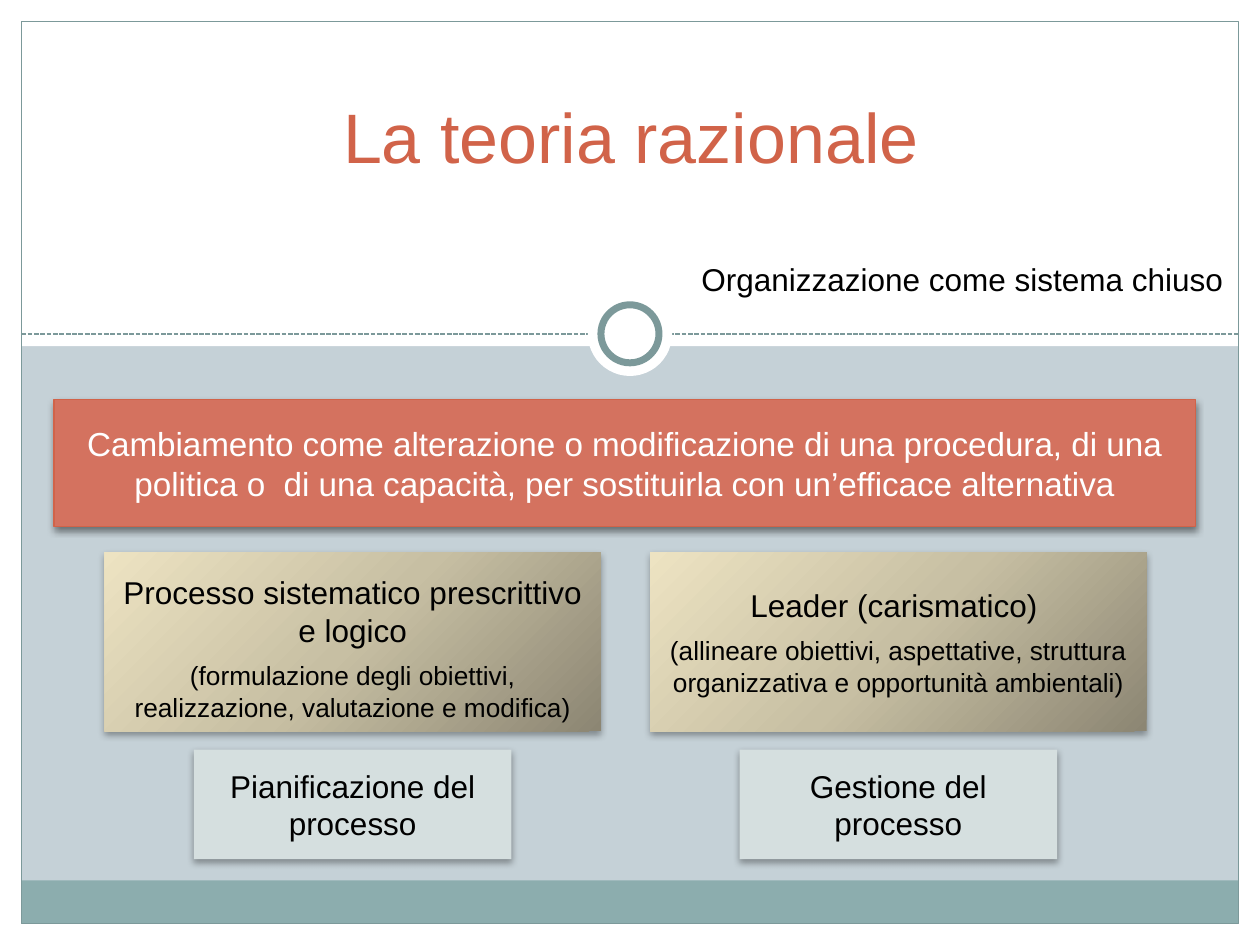
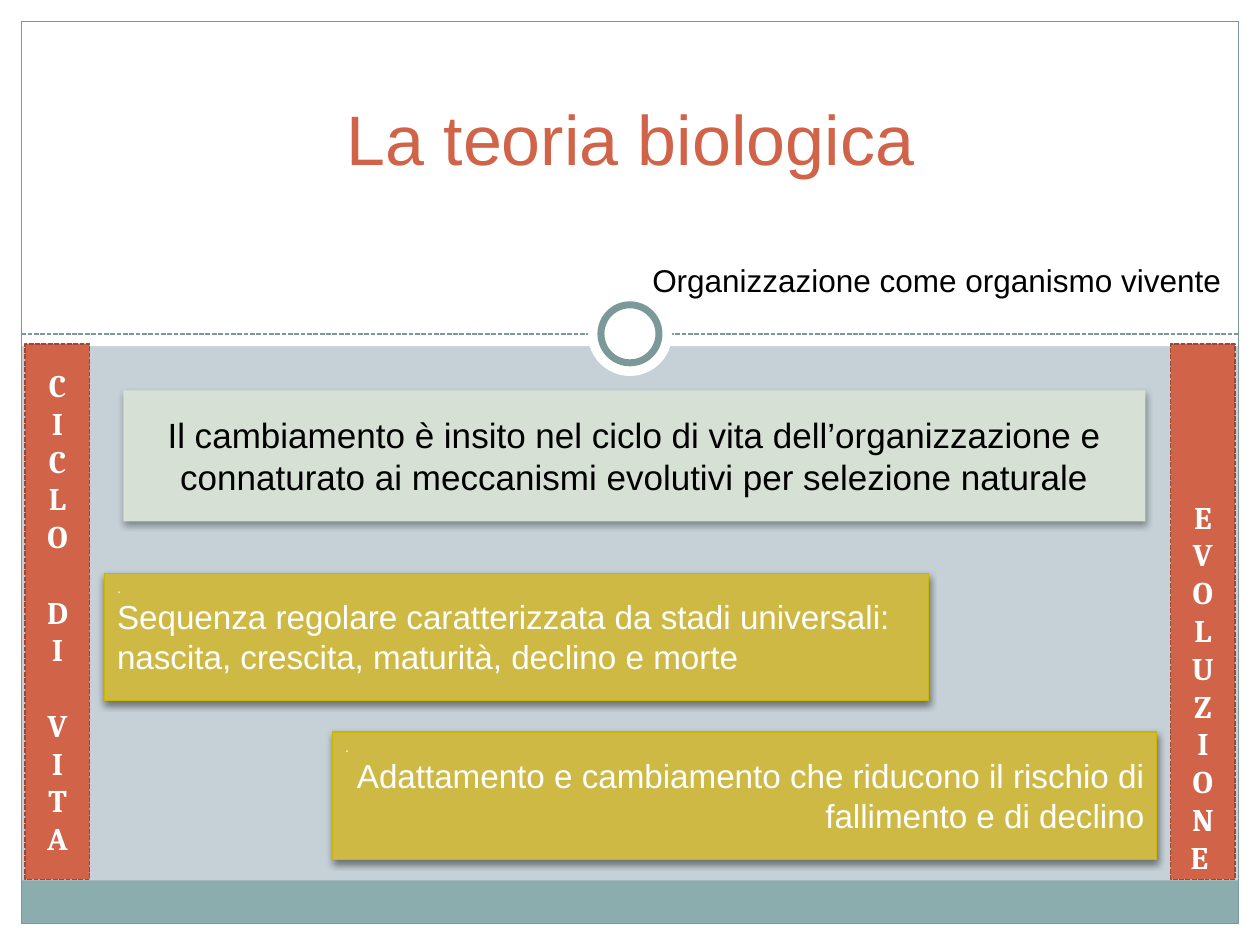
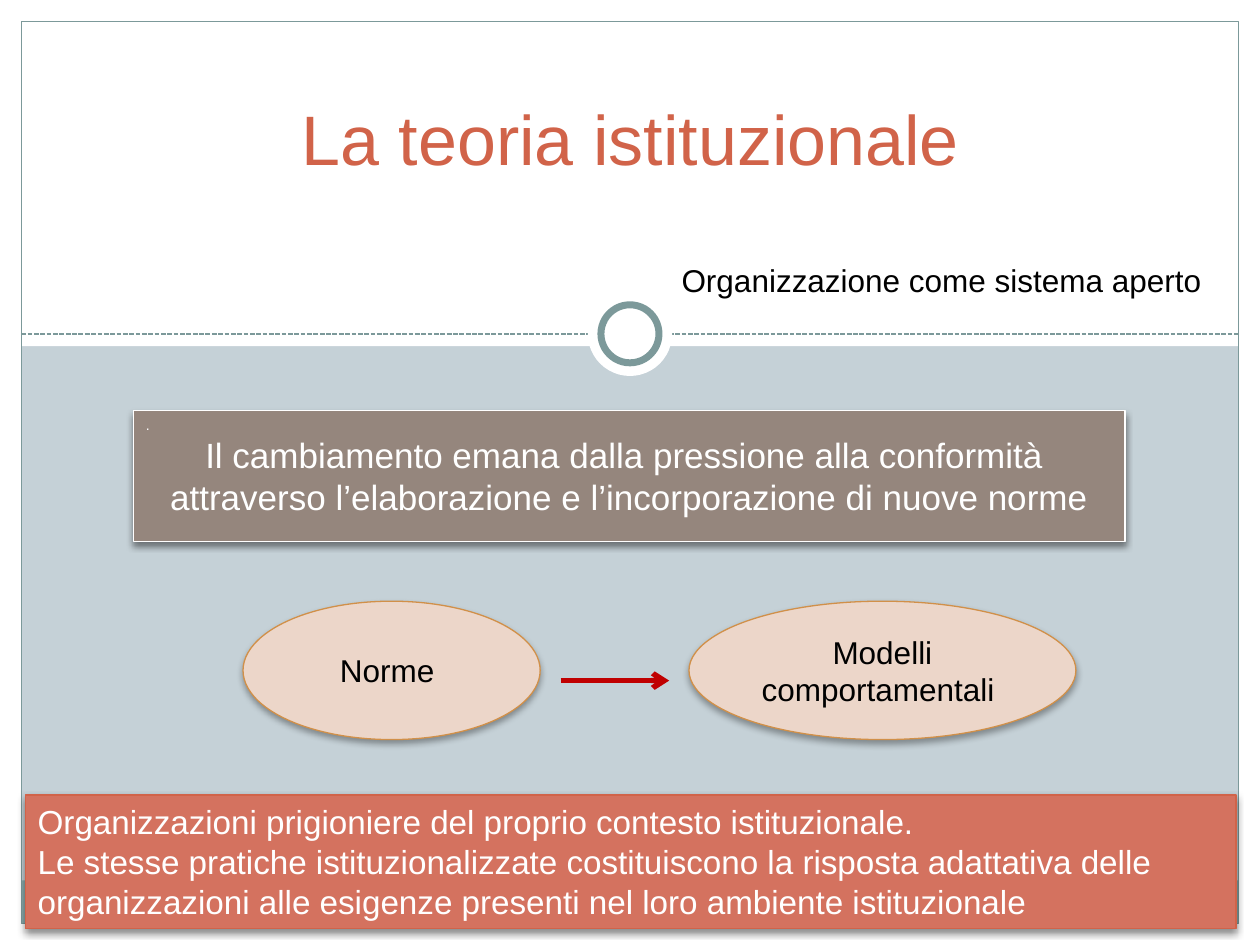
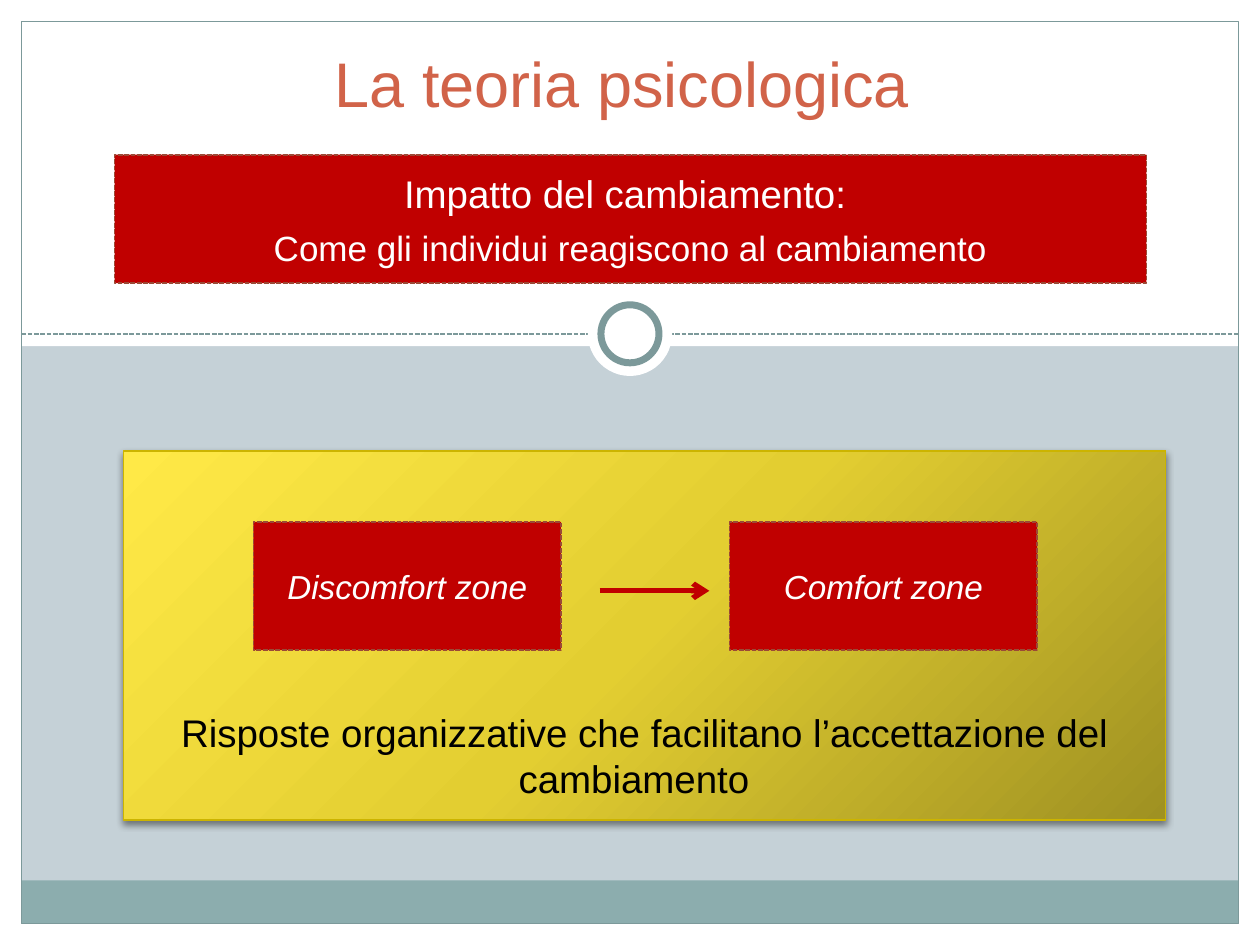
from copy import deepcopy

from lxml import etree
from pptx import Presentation
from pptx.dml.color import RGBColor
from pptx.enum.dml import MSO_LINE
from pptx.enum.shapes import MSO_CONNECTOR, MSO_SHAPE, PP_PLACEHOLDER
from pptx.enum.text import MSO_ANCHOR, MSO_AUTO_SIZE, PP_ALIGN
from pptx.oxml.ns import qn
from pptx.util import Cm, Pt

RECTANGLE, OVAL = MSO_SHAPE.RECTANGLE, MSO_SHAPE.OVAL
STRAIGHT = MSO_CONNECTOR.STRAIGHT
DASHED = MSO_LINE.SQUARE_DOT
LEFT, CENTER, RIGHT = PP_ALIGN.LEFT, PP_ALIGN.CENTER, PP_ALIGN.RIGHT
TOP, MIDDLE, BOTTOM = MSO_ANCHOR.TOP, MSO_ANCHOR.MIDDLE, MSO_ANCHOR.BOTTOM
NO_AUTOFIT = MSO_AUTO_SIZE.NONE
TITLE = PP_PLACEHOLDER.TITLE
TITLE_ONLY = 5

COLORS = {
    "background": "C5D1D7", "white": "FFFFFF", "black": "000000",
    "band": "8CADAE", "teal": "7C999A", "coral": "D16349",
    "light coral": "D4725F", "brick": "9B4936", "mist": "D5DFDF",
    "sage": "D6E0D5", "mustard": "CFB945", "gold": "CCB400",
    "taupe": "95867D", "peach": "ECD6C9", "orange": "D19049", "red": "C00000",
    "dark sand": "8C8673", "sand": "C7BFA3", "light sand": "EDE3C2",
    "dark yellow": "9F9122", "yellow": "E3CE31", "light yellow": "FFE947",
}

SAND = ("dark sand", "sand", "light sand")
YELLOW = ("dark yellow", "yellow", "light yellow")
STYLES = {
    "paper": {"fill": "white"},
    "band": {"fill": "band"},
    "frame": {"line": "teal"},
    "ring": {"fill": "white", "line": "teal", "width": 4},
    "coral": {"fill": "light coral", "line": "coral", "shadow": 45, "text": "white"},
    "mustard": {"fill": "mustard", "line": "gold", "shadow": 45, "text": "white"},
    "taupe": {"fill": "taupe", "line": "white", "shadow": 45, "text": "white"},
    "mist": {"fill": "mist", "shadow": 35},
    "sage": {"fill": "sage", "shadow": 35},
    "peach": {"fill": "peach", "line": "orange", "shadow": 35},
    "sand": {"gradient": SAND, "shadow": 35},
    "yellow": {"gradient": YELLOW, "line": "gold", "shadow": 45},
    "strip": {"fill": "coral", "line": "brick", "width": 0.9, "dash": DASHED,
              "text": "white", "font": "Cambria"},
    "red": {"fill": "red", "line": "brick", "width": 0.9, "dash": DASHED,
            "text": "white"},
}

WIDTH, HEIGHT, MARGIN = 25.4, 19.05, 0.43
INNER_WIDTH = WIDTH - 2 * MARGIN
DIVIDER_Y = 6.73
COLUMN_CENTERS = (7.11, 18.11)
WIDE_TITLE_X, WIDE = 0.51, 24.41
TITLE_BOX = (1.91, 1.73, 21.59, 2.01)


def centered(center, top, width, height):
    return (center - width / 2, top, width, height)


def circle(diameter):
    return centered(WIDTH / 2, DIVIDER_Y - diameter / 2, diameter, diameter)


def letters(words):
    return [
        (letter, {"size": 18, "bold": True,
                  "space_before": 21.5 if number and not position else 0})
        for number, word in enumerate(words)
        for position, letter in enumerate(word)
    ]


DOT = (".", {"size": 8, "alignment": LEFT})

DECORATION = [
    (RECTANGLE, "paper", (0, HEIGHT - MARGIN, WIDTH, MARGIN)),
    (RECTANGLE, "paper", (WIDTH - MARGIN, 0, MARGIN, HEIGHT)),
    (RECTANGLE, "paper", (0, 0, MARGIN, HEIGHT)),
    (RECTANGLE, "paper", (0, 0, WIDTH, 6.98)),
    (RECTANGLE, "band", (MARGIN, 17.75, INNER_WIDTH, 0.87)),
    (RECTANGLE, "frame", (MARGIN, MARGIN, INNER_WIDTH, HEIGHT - 2 * MARGIN)),
    (OVAL, "paper", circle(1.7)),
    (OVAL, "ring", circle(1.17)),
]

SLIDES = [
    {
        "title": ("La teoria razionale", (WIDE_TITLE_X, 0.91, WIDE, 2.79), 40),
        "title fill": "white",
        "caption": ("Organizzazione come sistema chiuso", (13.89, 5.11, 11.4, 1.02)),
        "shapes": [
            (RECTANGLE, "coral", (1.09, 8.05, 23.01, 2.57), [
                ("Cambiamento come alterazione o modificazione di una procedura, "
                 "di una politica o  di una capacità, per sostituirla con "
                 "un’efficace alternativa", {"size": 19})]),
            (RECTANGLE, "mist", centered(COLUMN_CENTERS[0], 15.11, 6.4, 2.21), [
                ("Pianificazione del processo", {"size": 18})]),
            (RECTANGLE, "mist", centered(COLUMN_CENTERS[1], 15.11, 6.4, 2.21), [
                ("Gestione del processo", {"size": 18})]),
            (RECTANGLE, "sand", centered(COLUMN_CENTERS[0], 11.13, 10.01, 3.61), [
                ("Processo sistematico prescrittivo e logico", {"size": 18}),
                ("(formulazione degli obiettivi, realizzazione, valutazione e "
                 "modifica)", {"size": 15, "space_before": 6})],
             {"margin_top": Cm(0.38)}),
            (RECTANGLE, "sand", centered(COLUMN_CENTERS[1], 11.13, 10.01, 3.61), [
                ("Leader (carismatico) ", {"size": 18}),
                ("(allineare obiettivi, aspettative, struttura organizzativa e "
                 "opportunità ambientali)", {"size": 15, "space_before": 6})]),
        ],
    },
    {
        "title": ("La teoria biologica", TITLE_BOX, 40),
        "caption": ("Organizzazione come organismo vivente", (12.9, 5.13, 11.99, 1.02)),
        "shapes": [
            (RECTANGLE, "sage", (2.49, 7.87, 20.6, 2.64), [
                ("Il cambiamento è insito nel ciclo di vita dell’organizzazione e "
                 "connaturato ai meccanismi evolutivi per selezione naturale",
                 {"size": 20})]),
            (RECTANGLE, "strip", (0.51, 6.93, 1.3, 10.8),
             letters(["CICLO", "DI", "VITA"])),
            (RECTANGLE, "strip", (23.6, 6.93, 1.3, 10.8),
             letters([[*"EVOLUZION", "E "]]),
             {"vertical_anchor": BOTTOM, "margin_bottom": Cm(0.08)}),
            (RECTANGLE, "mustard", (2.11, 11.56, 16.61, 2.57), [
                DOT,
                ("Sequenza regolare caratterizzata da stadi universali: nascita, "
                 "crescita, maturità, declino e morte",
                 {"size": 19, "alignment": LEFT})],
             {"vertical_anchor": TOP}),
            (RECTANGLE, "mustard", (6.71, 14.76, 16.61, 2.57), [
                DOT,
                ("Adattamento e cambiamento che riducono il rischio di fallimento "
                 "e di declino", {"size": 19, "alignment": RIGHT})],
             {"vertical_anchor": TOP}),
        ],
    },
    {
        "title": ("La teoria istituzionale", TITLE_BOX, 40),
        "caption": ("Organizzazione come sistema aperto", (13.49, 5.13, 11.99, 1.02)),
        "shapes": [
            (RECTANGLE, "taupe", (2.69, 8.28, 19.99, 2.64), [
                DOT,
                ("Il cambiamento emana dalla pressione alla conformità  attraverso "
                 "l’elaborazione e l’incorporazione di nuove norme", {"size": 20})],
             {"vertical_anchor": TOP}),
            (OVAL, "peach", (4.9, 12.12, 5.99, 2.79), [("Norme ", {"size": 18})]),
            (OVAL, "peach", (13.89, 12.12, 7.8, 2.79), [
                ("Modelli comportamentali ", {"size": 18})]),
            (RECTANGLE, "coral", (WIDE_TITLE_X, 16.03, WIDE, 2.69), [
                ("Organizzazioni prigioniere del proprio contesto istituzionale.",
                 {"size": 19, "alignment": LEFT}),
                ("Le stesse pratiche istituzionalizzate costituiscono la risposta "
                 "adattativa delle organizzazioni alle esigenze presenti nel loro "
                 "ambiente istituzionale", {"size": 19, "alignment": LEFT})],
             {"vertical_anchor": TOP}),
        ],
        "arrow": (11.3, 13.49, 13.72),
    },
    {
        "title": ("La teoria psicologica ", (WIDE_TITLE_X, 0.53, WIDE, 2.01), 36),
        "shapes": [
            (RECTANGLE, "yellow", (2.49, 9.09, 21.01, 7.44), [
                ("Risposte organizzative che facilitano l’accettazione del "
                 "cambiamento  ", {"size": 22})],
             {"vertical_anchor": BOTTOM, "margin_bottom": Cm(0.38)}),
            (RECTANGLE, "red", (2.31, 3.12, 20.8, 2.59), [
                ("Impatto del cambiamento: ", {"size": 22}),
                ("Come gli individui reagiscono al cambiamento",
                 {"size": 20, "space_before": 6})]),
            (RECTANGLE, "red", (5.11, 10.52, 6.2, 2.59), [
                ("Discomfort zone", {"size": 19, "italic": True})]),
            (RECTANGLE, "red", (14.71, 10.52, 6.2, 2.59), [
                ("Comfort zone", {"size": 19, "italic": True})]),
        ],
        "arrow": (12.09, 14.3, 11.91),
    },
]


def set_attributes(target, values):
    for name, value in values.items():
        setattr(target, name, value)


def color(name):
    return RGBColor.from_string(COLORS[name])


def place(shape, box):
    names = ("left", "top", "width", "height")
    set_attributes(shape, dict(zip(names, map(Cm, box))))


def paint(fill, name):
    if name:
        fill.solid()
        fill.fore_color.rgb = color(name)
    else:
        fill.background()


def paint_gradient(shape, names):
    shape.fill.gradient()
    shape.fill.gradient_angle = 135
    stop_list = shape.element.spPr.find(".//" + qn("a:gsLst"))
    stop_list.append(deepcopy(stop_list[-1]))
    for stop, name, position in zip(shape.fill.gradient_stops, names, (0, 0.5, 1)):
        stop.color.rgb = color(name)
        stop.position = position


def add_shadow(shape, opacity):
    effects = shape.element.spPr.find(qn("a:effectLst"))
    shadow = etree.SubElement(
        effects, qn("a:outerShdw"), blurRad=str(Pt(4)), dist=str(Pt(2)),
        dir=str(90 * 60000), rotWithShape="0")
    tint = etree.SubElement(shadow, qn("a:srgbClr"), val=COLORS["black"])
    etree.SubElement(tint, qn("a:alpha"), val=str(opacity * 1000))


def write(frame, paragraphs, text_color="black", font="Arial", **frame_format):
    set_attributes(frame, {"word_wrap": True, "auto_size": NO_AUTOFIT,
                           "vertical_anchor": MIDDLE, **frame_format})
    for index, (text, values) in enumerate(paragraphs):
        paragraph = frame.add_paragraph() if index else frame.paragraphs[0]
        set_attributes(paragraph, {
            "alignment": values.get("alignment", CENTER),
            "space_before": Pt(values.get("space_before", 0))})
        run = paragraph.add_run()
        run.text = text
        set_attributes(run.font, {
            "name": font, "size": Pt(values["size"]),
            "bold": values.get("bold", False),
            "italic": values.get("italic", False)})
        run.font.color.rgb = color(text_color)


def add_block(slide, kind, style_name, box, paragraphs=(), frame_format=None):
    style = STYLES[style_name]
    shape = slide.shapes.add_shape(kind, *map(Cm, box))
    shape.shadow.inherit = False
    if "gradient" in style:
        paint_gradient(shape, style["gradient"])
    else:
        paint(shape.fill, style.get("fill"))
    paint(shape.line.fill, style.get("line"))
    if "line" in style:
        set_attributes(shape.line, {"width": Pt(style.get("width", 0.75)),
                                    "dash_style": style.get("dash")})
    if "shadow" in style:
        add_shadow(shape, style["shadow"])
    if paragraphs:
        write(shape.text_frame, paragraphs, style.get("text", "black"),
              style.get("font", "Arial"), **(frame_format or {}))
    return shape


def add_line(slide, start, end, y, line_color, width, dash=None):
    line = slide.shapes.add_connector(STRAIGHT, Cm(start), Cm(y), Cm(end), Cm(y))
    line.line.color.rgb = color(line_color)
    set_attributes(line.line, {"width": Pt(width), "dash_style": dash})
    etree.SubElement(line.element.spPr, qn("a:effectLst"))
    return line


def add_arrow(slide, start, end, y):
    arrow = add_line(slide, start, end, y, "red", 3)
    outline = arrow.element.spPr.find(qn("a:ln"))
    etree.SubElement(outline, qn("a:tailEnd"), type="arrow")


def decorate_layout(layout, slide):
    paint(layout.background.fill, "background")
    for placeholder in list(layout.placeholders):
        if placeholder.placeholder_format.type != TITLE:
            layout.shapes.element.remove(placeholder.element)
    parts = [add_block(slide, *entry) for entry in DECORATION]
    divider = add_line(slide, MARGIN, WIDTH - MARGIN, DIVIDER_Y, "teal", 0.9, DASHED)
    parts.insert(5, divider)
    for index, part in enumerate(parts, start=2):
        layout.shapes.element.insert(index, part.element)


def fill_slide(slide, content):
    text, box, size = content["title"]
    title = slide.shapes.title
    place(title, box)
    write(title.text_frame, [(text, {"size": size})], "coral",
          vertical_anchor=BOTTOM)
    if "title fill" in content:
        paint(title.fill, content["title fill"])
    if "caption" in content:
        text, box = content["caption"]
        caption = slide.shapes.add_textbox(*map(Cm, box))
        write(caption.text_frame, [(text, {"size": 18, "alignment": LEFT})],
              vertical_anchor=TOP)
    for entry in content["shapes"]:
        add_block(slide, *entry)
    if "arrow" in content:
        add_arrow(slide, *content["arrow"])


def main():
    presentation = Presentation()
    set_attributes(presentation, {"slide_width": Cm(WIDTH),
                                  "slide_height": Cm(HEIGHT)})
    layout = presentation.slide_layouts[TITLE_ONLY]
    slides = [presentation.slides.add_slide(layout) for _ in SLIDES]
    decorate_layout(layout, slides[0])
    for slide, content in zip(slides, SLIDES):
        fill_slide(slide, content)
    presentation.save("out.pptx")


if __name__ == "__main__":
    main()
